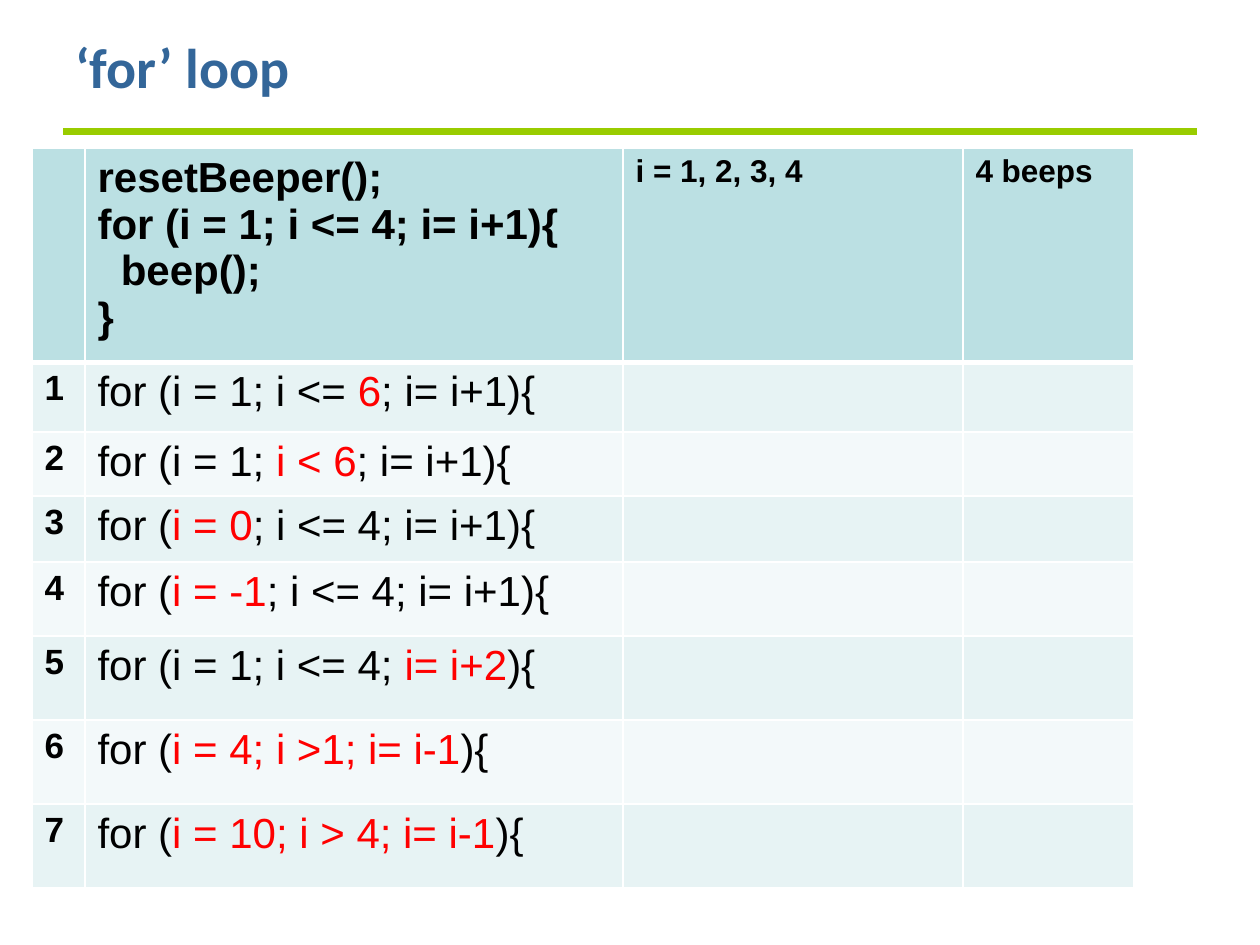
from lxml import etree
from pptx import Presentation
from pptx import util as u
from pptx.dml.color import RGBColor
from pptx.enum import shapes, text
from pptx.oxml.ns import qn

EMU_PER_PX = 914400 / 126
BLACK = RGBColor(0x00, 0x00, 0x00)
RED = RGBColor(0xFF, 0x00, 0x00)
BLUE = RGBColor(0x33, 0x66, 0x99)
GREEN = RGBColor(0x99, 0xCC, 0x00)
HEADER = RGBColor(0xBB, 0xE0, 0xE3)
BANDS = (RGBColor(0xE7, 0xF3, 0xF4), RGBColor(0xF3, 0xF9, 0xFA))
WHITE = RGBColor(0xFF, 0xFF, 0xFF)

COLUMNS = [53, 538, 340, 171]
ROWS = [198, 70, 64, 66, 74, 84, 84, 84]
EXAMPLE = "resetBeeper();\nfor (i = 1; i <= 4; i= i+1){\n  beep();\n}"
# Each loop: text before the change, the changed part, text after it
LOOPS = [
    ("for (i = 1; i <= ", "6", "; i= i+1){"),
    ("for (i = 1; ", "i < 6", "; i= i+1){"),
    ("for (", "i = 0", "; i <= 4; i= i+1){"),
    ("for (", "i = -1", "; i <= 4; i= i+1){"),
    ("for (i = 1; i <= 4; ", "i= i+2", "){"),
    ("for (", "i = 4; i >1; i= i-1", "){"),
    ("for (", "i = 10; i > 4; i= i-1", "){"),
]


def px(n):
    return u.Emu(round(n * EMU_PER_PX))


class Deck:
    def __init__(self, width, height):
        self.prs = Presentation()
        self.prs.slide_width, self.prs.slide_height = px(width), px(height)
        self.s = self.prs.slides.add_slide(self.prs.slide_layouts[6])

    def style(self, r, size, color=BLACK, bold=False, font="Arial"):
        r.font.name, r.font.size, r.font.bold = font, u.Pt(size), bold
        r.font.color.rgb = color

    def title(self, words, x, y, w, h):
        tf = self.s.shapes.add_textbox(px(x), px(y), px(w), px(h)).text_frame
        tf.word_wrap = True
        tf.vertical_anchor = text.MSO_ANCHOR.MIDDLE
        tf.text = words
        self.style(tf.paragraphs[0].runs[0], 32, BLUE, True, "Calibri")

    def rule(self, x1, x2, y):
        sp = self.s.shapes.add_connector(
            shapes.MSO_CONNECTOR.STRAIGHT, px(x1), px(y), px(x2), px(y))
        sp.line.color.rgb, sp.line.width = GREEN, u.Pt(4)
        etree.SubElement(sp._element.spPr, qn("a:effectLst"))

    def table(self, x, y, columns, rows):
        frame = self.s.shapes.add_table(len(rows), len(columns), px(x), px(y),
                                        px(sum(columns)), px(sum(rows)))
        table = frame.table
        for column, width in zip(table.columns, columns):
            column.width = px(width)
        for i, (row, height) in enumerate(zip(table.rows, rows)):
            row.height = px(height)
            for cell in row.cells:
                self.borders(cell, top=3 if i == 1 else 1,
                             bottom=3 if i == 0 else 1)
                cell.fill.solid()
                cell.fill.fore_color.rgb = BANDS[(i - 1) % 2] if i else HEADER
        return table

    def borders(self, cell, top, bottom):
        tcPr = cell._tc.get_or_add_tcPr()
        for side, points in zip("LRTB", (1, 1, top, bottom)):
            ln = etree.SubElement(tcPr, qn(f"a:ln{side}"), w=str(u.Pt(points)))
            fill = etree.SubElement(ln, qn("a:solidFill"))
            etree.SubElement(fill, qn("a:srgbClr"), val=str(WHITE))

    def bold_cell(self, cell, words, size):
        cell.text_frame.text = words
        for p in cell.text_frame.paragraphs:
            self.style(p.runs[0], size, bold=True)

    def loop_cell(self, cell, parts):
        p = cell.text_frame.paragraphs[0]
        for part, color in zip(parts, (BLACK, RED, BLACK)):
            r = p.add_run()
            r.text = part
            self.style(r, 24, color)


def main():
    deck = Deck(1260, 945)
    deck.rule(63, 1197, 132)
    deck.title("‘for’ loop", 63, 32, 1134, 69)
    table = deck.table(32, 148, COLUMNS, ROWS)
    header = ((EXAMPLE, 24), ("i = 1, 2, 3, 4", 18), ("4 beeps", 18))
    for column, (words, size) in enumerate(header, 1):
        deck.bold_cell(table.cell(0, column), words, size)
    for number, parts in enumerate(LOOPS, 1):
        deck.bold_cell(table.cell(number, 0), str(number), 20)
        deck.loop_cell(table.cell(number, 1), parts)
    deck.prs.save("out.pptx")


if __name__ == "__main__":
    main()
